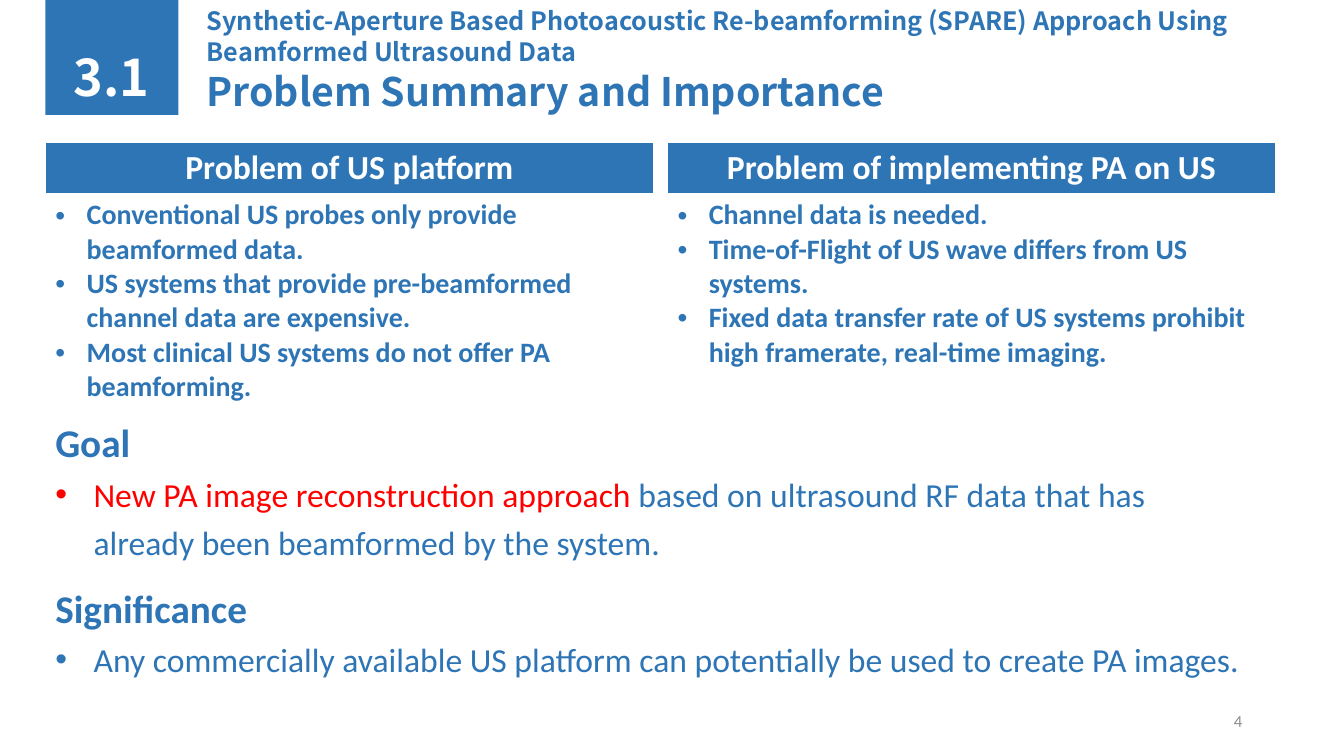
from dataclasses import dataclass

from lxml.etree import SubElement
from pptx import Presentation
from pptx.dml.color import RGBColor
from pptx.enum.shapes import MSO_SHAPE
from pptx.enum.text import MSO_ANCHOR, MSO_AUTO_SIZE, PP_ALIGN
from pptx.oxml.ns import qn
from pptx.util import Pt

PX = 9144  # EMU in one px, 100 px to the inch


@dataclass(frozen=True)
class Theme:
    blue: RGBColor = RGBColor(0x2E, 0x75, 0xB6)
    white: RGBColor = RGBColor(0xFF, 0xFF, 0xFF)
    red: RGBColor = RGBColor(0xFF, 0x00, 0x00)
    grey: RGBColor = RGBColor(0x8C, 0x8C, 0x8C)
    heading_font: str = "Noto Sans CJK SC"
    body_font: str = "Calibri"
    number: int = 36
    heading: int = 28
    body: int = 24
    item: int = 20
    topic: int = 18
    footer: int = 12


theme = Theme()


def write(para, text, size, color, bold=False, font=theme.body_font):
    span = para.add_run()
    span.text = text
    span.font.name = font
    span.font.size = Pt(size)
    span.font.bold = bold
    span.font.color.rgb = color


def add_bullet(para, indent):
    properties = para._p.get_or_add_pPr()
    properties.set("marL", str(indent * PX))
    properties.set("indent", str(-indent * PX))
    SubElement(properties, qn("a:buFont"), typeface="Arial")
    SubElement(properties, qn("a:buChar"), char="•")


deck = Presentation()
deck.slide_width, deck.slide_height = 1333 * PX, 750 * PX
page = deck.slides.add_slide(deck.slide_layouts[5])

# Title with the topic above it
title = page.shapes.title
title.left, title.top, title.width, title.height = 195 * PX, 0, 1130 * PX, 118 * PX
title.fill.solid()
title.fill.fore_color.rgb = theme.white
frame = title.text_frame
frame.auto_size = MSO_AUTO_SIZE.NONE
frame.word_wrap = True
frame.vertical_anchor = MSO_ANCHOR.TOP
title_lines = [
    ("Synthetic-Aperture Based Photoacoustic Re-beamforming (SPARE) Approach Using "
     "Beamformed Ultrasound Data", theme.topic, 22),
    ("Problem Summary and Importance", theme.heading, 34),
]
for index, (text, size, spacing) in enumerate(title_lines):
    para = frame.add_paragraph() if index else frame.paragraphs[0]
    para.alignment = PP_ALIGN.LEFT
    para.line_spacing = Pt(spacing)
    write(para, text, size, theme.blue, True, theme.heading_font)

# Section number on its block
for left, top, width, height in [(45, 0, 132, 114), (63, 40, 97, 71)]:
    block = page.shapes.add_shape(
        MSO_SHAPE.RECTANGLE, left * PX, top * PX, width * PX, height * PX)
    block.shadow.inherit = False
    block.fill.solid()
    block.fill.fore_color.rgb = theme.blue
    block.line.fill.background()
block.text_frame.word_wrap = False
block.text_frame.vertical_anchor = MSO_ANCHOR.TOP
para = block.text_frame.paragraphs[0]
para.alignment = PP_ALIGN.LEFT
para.line_spacing = Pt(44)
write(para, "3.1", theme.number, theme.white, True, theme.heading_font)

# Problem tables side by side
problems = [
    (45, 212, "Problem of US platform", [
        "Conventional US probes only provide beamformed data.",
        "US systems that provide pre-beamformed channel data are expensive.",
        "Most clinical US systems do not offer PA beamforming.",
    ]),
    (662, 179, "Problem of implementing PA on US", [
        "Channel data is needed.",
        "Time-of-Flight of US wave differs from US systems.",
        "Fixed data transfer rate of US systems prohibit high framerate, "
        "real-time imaging.",
    ]),
]
header_height = 48
for left, list_height, heading, items in problems:
    table = page.shapes.add_table(
        2, 1, left * PX, 141 * PX, 603 * PX, (header_height + list_height) * PX).table
    table.rows[0].height = header_height * PX
    table.rows[1].height = list_height * PX
    header, listing = table.cell(0, 0), table.cell(1, 0)
    for cell, color in [(header, theme.blue), (listing, theme.white)]:
        cell.fill.solid()
        cell.fill.fore_color.rgb = color
    para = header.text_frame.paragraphs[0]
    para.alignment = PP_ALIGN.CENTER
    write(para, heading, theme.body, theme.white, True)
    frame = listing.text_frame
    for index, item in enumerate(items):
        para = frame.add_paragraph() if index else frame.paragraphs[0]
        add_bullet(para, 31)
        write(para, item, theme.item, theme.blue, True)

# Goal and significance
sections = [
    (401, 1193, 164, "Goal", [
        ("New PA image reconstruction approach", theme.red),
        (" based on ultrasound RF data that has already been beamformed by the system.",
         theme.blue),
    ]),
    (565, 1219, 115, "Significance", [
        ("Any commercially available US platform can potentially be used to create "
         "PA images.", theme.blue),
    ]),
]
for top, width, height, heading, parts in sections:
    box = page.shapes.add_textbox(45 * PX, top * PX, width * PX, height * PX)
    frame = box.text_frame
    frame.word_wrap = True
    para = frame.paragraphs[0]
    para.line_spacing = 1.2
    write(para, heading, theme.heading, theme.blue, True)
    para = frame.add_paragraph()
    para.line_spacing = 1.2
    add_bullet(para, 38)
    for text, color in parts:
        write(para, text, theme.body, color)

# Page number
box = page.shapes.add_textbox(942 * PX, 695 * PX, 300 * PX, 40 * PX)
box.text_frame.word_wrap = True
box.text_frame.vertical_anchor = MSO_ANCHOR.MIDDLE
para = box.text_frame.paragraphs[0]
para.alignment = PP_ALIGN.RIGHT
write(para, "4", theme.footer, theme.grey)

deck.save("out.pptx")
